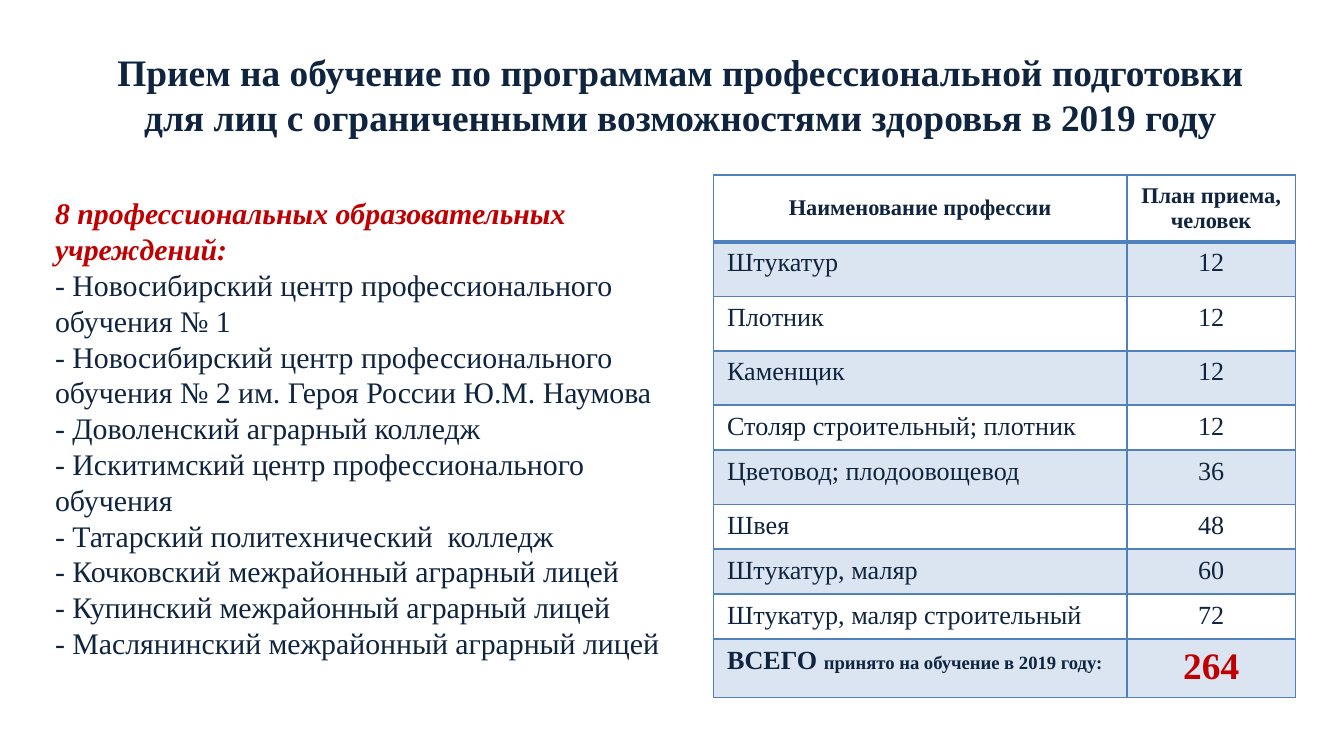
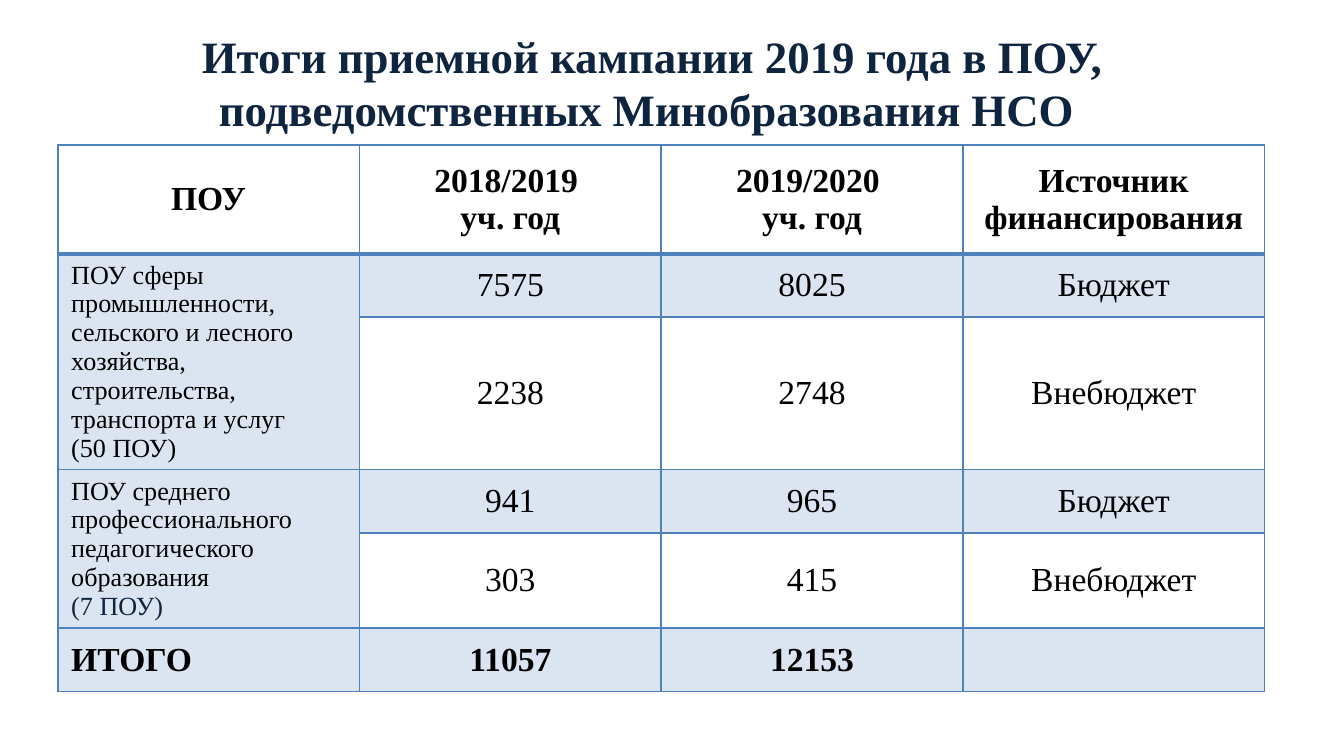
from dataclasses import dataclass

from lxml import etree
from pptx import Presentation
from pptx.dml.color import RGBColor
from pptx.enum.text import MSO_ANCHOR, MSO_AUTO_SIZE, PP_ALIGN
from pptx.oxml.ns import qn
from pptx.util import Inches, Pt

LEFT, CENTER = PP_ALIGN.LEFT, PP_ALIGN.CENTER
TOP, MIDDLE = MSO_ANCHOR.TOP, MSO_ANCHOR.MIDDLE
GROW, FIXED = MSO_AUTO_SIZE.SHAPE_TO_FIT_TEXT, MSO_AUTO_SIZE.NONE

FONT = "Times New Roman"
NAVY, RED, BLUE, BLACK = "0F243E", "C00000", "4F81BD", "000000"
BAND_OPACITY = 20
SLIDE_WIDTH = Inches(10)
SLIDE_HEIGHT = SLIDE_WIDTH * 9 // 16
COLUMN, ROW = SLIDE_WIDTH / 100, SLIDE_HEIGHT / 56.25
TITLE_AND_BODY, TITLE_ONLY = 1, 5

ADMISSION_TITLE = (
    "Прием на обучение по программам профессиональной подготовки \n"
    "для лиц с ограниченными возможностями здоровья в 2019 году "
)
INSTITUTIONS_HEADING = "8 профессиональных образовательных учреждений:"
INSTITUTIONS = [
    "Новосибирский центр профессионального обучения № 1",
    "Новосибирский центр профессионального обучения № 2 им. Героя России Ю.М. Наумова",
    "Доволенский аграрный колледж",
    "Искитимский центр профессионального обучения",
    "Татарский политехнический  колледж",
    "Кочковский межрайонный аграрный лицей",
    "Купинский межрайонный аграрный лицей",
    "Маслянинский межрайонный аграрный лицей",
]
PROFESSIONS = [
    ("Штукатур", "12"),
    ("Плотник", "12"),
    ("Каменщик", "12"),
    ("Столяр строительный; плотник", "12"),
    ("Цветовод; плодоовощевод", "36"),
    ("Швея", "48"),
    ("Штукатур, маляр", "60"),
    ("Штукатур, маляр строительный", "72"),
]
PROFESSION_ROWS = [5, 4.05, 4.05, 4.05, 3.3, 4.05, 3.3, 3.3, 3.3, 4.3]

RESULTS_TITLE = (
    "Итоги приемной кампании 2019 года в ПОУ, "
    "подведомственных Минобразования НСО "
)
RESULTS_HEADINGS = [
    ["ПОУ"],
    ["2018/2019 ", "уч. год"],
    ["2019/2020 ", "уч. год"],
    ["Источник финансирования"],
]
INDUSTRY = (
    "ПОУ сферы промышленности, сельского и лесного хозяйства, "
    "строительства, транспорта и услуг"
)
PEDAGOGY = "ПОУ среднего профессионального педагогического образования"
RESULTS = [
    (INDUSTRY, "(50 ПОУ)", BLACK, ("7575", "8025"), ("2238", "2748")),
    (PEDAGOGY, "(7 ПОУ)", NAVY, ("941", "965"), ("303", "415")),
]
RESULT_ROWS = [8.1, 4.7, 11.3, 4.7, 7.1, 4.7]


@dataclass
class Box:
    left: float
    top: float
    width: float
    height: float

    def lengths(self):
        return (
            round(self.left * COLUMN),
            round(self.top * ROW),
            round(self.width * COLUMN),
            round(self.height * ROW),
        )


def color(value):
    return RGBColor.from_string(value)


def style(size, ink, bold=False, italic=False):
    return ink, {"name": FONT, "size": Pt(size), "bold": bold, "italic": italic}


def apply(target, values):
    for name, value in values.items():
        setattr(target, name, value)


def add_text(paragraph, text, ink, values):
    for index, line in enumerate(text.split("\n")):
        if index:
            paragraph.add_line_break()
        run = paragraph.add_run()
        run.text = line
        apply(run.font, values)
        run.font.color.rgb = color(ink)


def write(text_frame, paragraphs, **layout):
    for index, runs in enumerate(paragraphs):
        paragraph = text_frame.add_paragraph() if index else text_frame.paragraphs[0]
        apply(paragraph, layout)
        for text, (ink, values) in runs:
            add_text(paragraph, text, ink, values)


def place(shape, box):
    apply(shape, dict(zip(("left", "top", "width", "height"), box.lengths())))


def add_title(slide, box, text, size):
    title = slide.shapes.title
    place(title, box)
    apply(title.text_frame, {"word_wrap": True, "auto_size": FIXED, "vertical_anchor": MIDDLE})
    write(title.text_frame, [[(text, style(size, NAVY, True))]], alignment=CENTER)


def add_institutions(slide, box):
    body = slide.placeholders[1]
    place(body, box)
    apply(body.text_frame, {"word_wrap": True, "auto_size": GROW, "vertical_anchor": TOP})
    heading = [(INSTITUTIONS_HEADING, style(16, RED, True, True))]
    items = [[(f"- {name}", style(16, NAVY))] for name in INSTITUTIONS]
    write(body.text_frame, [heading] + items, alignment=LEFT,
          space_before=Pt(0), space_after=Pt(0))
    for paragraph in body.text_frame.paragraphs:
        properties = paragraph._p.get_or_add_pPr()
        properties.set("marL", "0")
        properties.set("indent", "0")
        etree.SubElement(properties, qn("a:buNone"))


def format_cell(cell, row):
    if row % 2:
        cell.fill.solid()
        cell.fill.fore_color.rgb = color(BLUE)
        tint = cell._tc.tcPr.find(".//" + qn("a:srgbClr"))
        etree.SubElement(tint, qn("a:alpha"), val=str(BAND_OPACITY * 1000))
    else:
        cell.fill.background()
    widths = {"L": 1, "R": 1, "T": 2 if row == 1 else 1, "B": 2 if row == 0 else 1}
    for index, (side, width) in enumerate(widths.items()):
        line = etree.Element(qn(f"a:ln{side}"), w=str(Pt(width)))
        fill = etree.SubElement(line, qn("a:solidFill"))
        etree.SubElement(fill, qn("a:srgbClr"), val=BLUE)
        cell._tc.tcPr.insert(index, line)


def add_grid(slide, box, columns, rows, cells, body_anchor):
    frame = slide.shapes.add_table(len(rows), len(columns), *box.lengths())
    table = frame.table
    apply(table, {"first_row": False, "horz_banding": False})
    for column, width in zip(table.columns, columns):
        column.width = round(width * COLUMN)
    for row, height in zip(table.rows, rows):
        row.height = round(height * ROW)
    for row, line in enumerate(cells):
        for column, (paragraphs, alignment) in enumerate(line):
            cell = table.cell(row, column)
            format_cell(cell, row)
            cell.vertical_anchor = body_anchor if row else MIDDLE
            write(cell.text_frame, paragraphs, alignment=alignment)
    return table


def entry(text, text_style, alignment=CENTER):
    return [[(text, text_style)]], alignment


def add_professions(slide, box):
    heading, plain = style(12, NAVY, True), style(14, NAVY)
    cells = [[entry("Наименование профессии", heading), entry("План приема, человек", heading)]]
    cells += [[entry(name, plain, LEFT), entry(count, plain)] for name, count in PROFESSIONS]
    total = [("ВСЕГО ", style(14, NAVY, True)),
             ("принято на обучение в 2019 году:", style(10, NAVY, True))]
    cells.append([([total], LEFT), entry("264", style(20, RED, True))])
    columns = [box.width * 0.71, box.width * 0.29]
    add_grid(slide, box, columns, PROFESSION_ROWS, cells, TOP)


def add_results(slide, box):
    strong, plain, small = style(18, BLACK, True), style(18, BLACK), style(14, BLACK)
    cells = [[([[(line, strong)] for line in lines], CENTER) for lines in RESULTS_HEADINGS]]
    for name, count, ink, budget, paid in RESULTS:
        group = [[(name, small)], [(count, style(14, ink))]]
        cells.append([(group, LEFT)] + [entry(text, plain) for text in (*budget, "Бюджет")])
        cells.append([([], LEFT)] + [entry(text, plain) for text in (*paid, "Внебюджет")])
    cells.append([entry("ИТОГО", strong, LEFT), entry("11057", strong),
                  entry("12153", strong), ([], CENTER)])
    columns = [box.width / 4] * 4
    table = add_grid(slide, box, columns, RESULT_ROWS, cells, MIDDLE)
    for row in (1, 3):
        table.cell(row, 0).merge(table.cell(row + 1, 0))


def add_admission_slide(presentation):
    slide = presentation.slides.add_slide(presentation.slide_layouts[TITLE_AND_BODY])
    add_title(slide, Box(3.1, 2.3, 95.8, 9.4), ADMISSION_TITLE, 20)
    add_institutions(slide, Box(3.1, 14, 50, 36))
    add_professions(slide, Box(53.1, 13, 43.3, sum(PROFESSION_ROWS)))


def add_results_slide(presentation):
    slide = presentation.slides.add_slide(presentation.slide_layouts[TITLE_ONLY])
    add_title(slide, Box(2, 1.4, 93, 9.4), RESULTS_TITLE, 24)
    add_results(slide, Box(4.3, 10.8, 89.8, sum(RESULT_ROWS)))


def main():
    presentation = Presentation()
    apply(presentation, {"slide_width": SLIDE_WIDTH, "slide_height": SLIDE_HEIGHT})
    add_admission_slide(presentation)
    add_results_slide(presentation)
    presentation.save("out.pptx")


if __name__ == "__main__":
    main()
